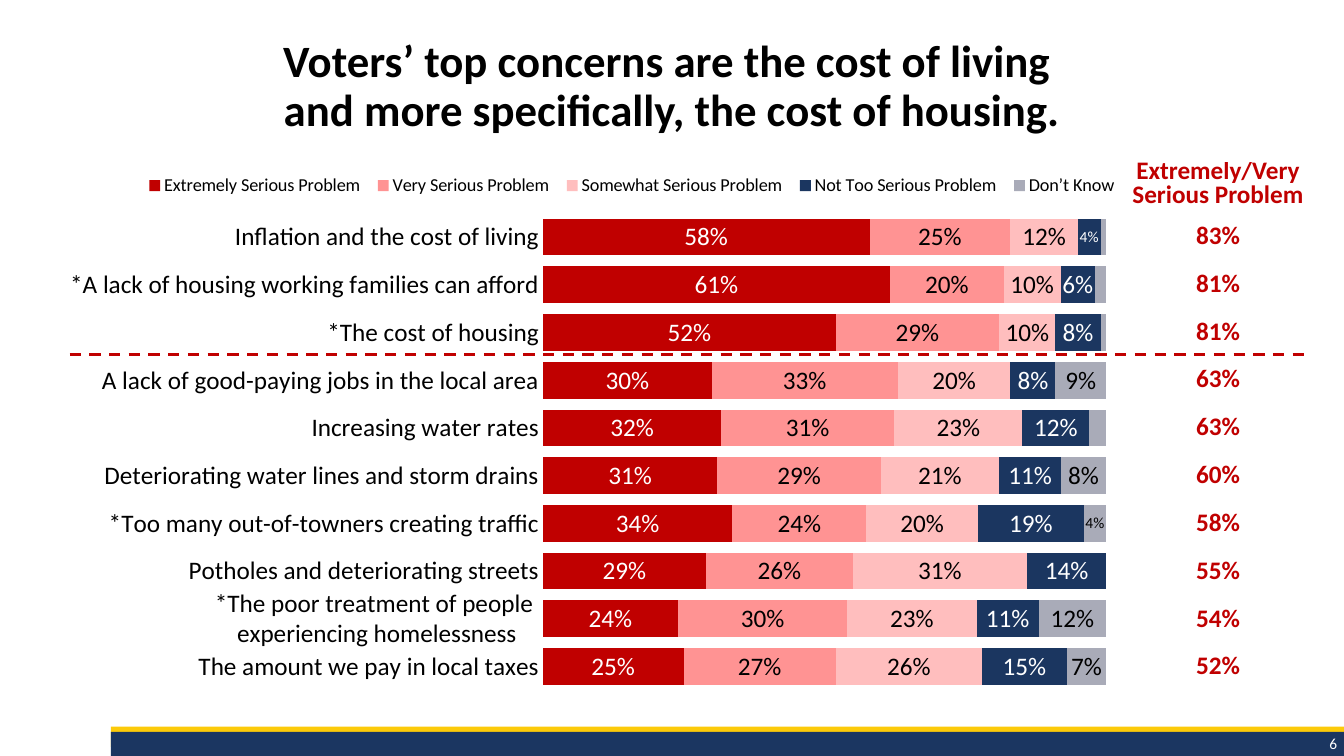
from pptx import Presentation
from pptx.chart.data import CategoryChartData
from pptx.dml.color import RGBColor
from pptx.enum.chart import XL_CHART_TYPE, XL_LEGEND_POSITION, XL_TICK_MARK
from pptx.enum.dml import MSO_LINE
from pptx.enum.shapes import MSO_CONNECTOR, MSO_SHAPE
from pptx.enum.text import MSO_ANCHOR, PP_ALIGN
from pptx.oxml import parse_xml
from pptx.oxml.ns import nsdecls, qn
from pptx.util import Pt
from lxml import etree

PX = 9144
STACK = XL_CHART_TYPE.BAR_STACKED_100
TOP = XL_LEGEND_POSITION.TOP
NO_TICK = XL_TICK_MARK.NONE
DASH = MSO_LINE.DASH
LINE = MSO_CONNECTOR.STRAIGHT
RECT = MSO_SHAPE.RECTANGLE
MIDDLE, BOTTOM = MSO_ANCHOR.MIDDLE, MSO_ANCHOR.BOTTOM
CENTER, RIGHT = PP_ALIGN.CENTER, PP_ALIGN.RIGHT
COLORS = {
    "red": "C00000", "pink": "FF9393", "pale": "FFBEBE", "navy": "1B3660",
    "gray": "A9ABB8", "gold": "FCCA09", "foot": "1B3661",
    "white": "FFFFFF", "black": "000000",
}


def style(font, size, color, bold=False):
    font.name = "Calibri"
    font.size = Pt(size)
    font.bold = bold
    font.color.rgb = RGBColor.from_string(COLORS[color])


def layout(x, y, w, h, inner=""):
    return parse_xml(
        f'<c:layout {nsdecls("c")}><c:manualLayout>{inner}'
        '<c:xMode val="edge"/><c:yMode val="edge"/>'
        f'<c:x val="{x}"/><c:y val="{y}"/><c:w val="{w}"/><c:h val="{h}"/>'
        '</c:manualLayout></c:layout>')


prs = Presentation()
prs.slide_width, prs.slide_height = 1333 * PX, 750 * PX
slide = prs.slides.add_slide(prs.slide_layouts[6])
shapes = slide.shapes

for top, high, color in [(721, 20, "gold"), (726, 24, "foot")]:
    bar = shapes.add_shape(RECT, 110 * PX, top * PX, 1223 * PX, high * PX)
    bar.shadow.inherit = False
    bar.fill.solid()
    bar.fill.fore_color.rgb = RGBColor.from_string(COLORS[color])
    bar.line.fill.background()

frame = shapes.add_textbox(1139 * PX, 723 * PX, 197 * PX, 29 * PX).text_frame
frame.word_wrap = True
frame.vertical_anchor = MIDDLE
para = frame.paragraphs[0]
para.alignment = RIGHT
run = para.add_run()
run.text = "6"
style(run.font, 11, "white")

topics = [
    "Inflation and the cost of living",
    "*A lack of housing working families can afford",
    "*The cost of housing",
    "A lack of good-paying jobs in the local area",
    "Increasing water rates",
    "Deteriorating water lines and storm drains",
    "*Too many out-of-towners creating traffic",
    "Potholes and deteriorating streets",
    "*The poor treatment of people \nexperiencing homelessness",
    "The amount we pay in local taxes",
]
answers = [
    ("Extremely Serious Problem", "red", "white",
     [58, 61, 52, 30, 32, 31, 34, 29, 24, 25]),
    ("Very Serious Problem", "pink", "black",
     [25, 20, 29, 33, 31, 29, 24, 26, 30, 27]),
    ("Somewhat Serious Problem", "pale", "black",
     [12, 10, 10, 20, 23, 21, 20, 31, 23, 26]),
    ("Not Too Serious Problem", "navy", "white",
     [4, 6, 8, 8, 12, 11, 19, 14, 11, 15]),
    ("Don’t Know", "gray", "black",
     [1, 2, 1, 9, 3, 8, 4, 0, 12, 7]),
]
data = CategoryChartData(number_format="0%")
data.categories = topics
for name, fill, ink, shares in answers:
    data.add_series(name, [share / 100 for share in shares])
chart = shapes.add_chart(
    STACK, 15 * PX, 154 * PX, 1102 * PX, 548 * PX, data).chart
style(chart.font, 10, "black")
chart.has_title = False

chart.has_legend = True
legend = chart.legend
legend.position = TOP
legend.include_in_layout = False
style(legend.font, 13, "black")
legend._element.insert(1, layout(0.11, 0.02, 0.89, 0.07))

area = chart._chartSpace.find(".//" + qn("c:plotArea"))
for old in area.findall(qn("c:layout")):
    area.remove(old)
area.insert(0, layout(0.475, 0.105, 0.507, 0.864,
                      '<c:layoutTarget val="inner"/>'))

axis = chart.category_axis
axis.reverse_order = True
axis.major_tick_mark = axis.minor_tick_mark = NO_TICK
axis.format.line.fill.background()
style(axis.tick_labels.font, 18, "black")
chart.value_axis.visible = False
chart.value_axis.has_major_gridlines = False

plot = chart.plots[0]
plot.gap_width, plot.overlap = 30, 100
plot.vary_by_categories = False
for series, (name, fill, ink, shares) in zip(plot.series, answers):
    series.format.fill.solid()
    series.format.fill.fore_color.rgb = RGBColor.from_string(COLORS[fill])
    labels = series.data_labels
    labels.show_value = True
    labels.number_format = "0%"
    labels.number_format_is_linked = False
    style(labels.font, 18, ink)
    hidden = [i for i, share in enumerate(shares) if share < 4]
    for spot, i in enumerate(hidden):
        mark = parse_xml(f'<c:dLbl {nsdecls("c")}><c:idx val="{i}"/>'
                         '<c:delete val="1"/></c:dLbl>')
        labels._element.insert(spot, mark)
    for i, share in enumerate(shares):
        if share == 4:
            style(series.points[i].data_label.font, 11, ink)

totals = [a + b for a, b in zip(answers[0][3], answers[1][3])]
cells = ["Extremely/Very Serious Problem"] + [f"{n}%" for n in totals]
table = shapes.add_table(
    len(cells), 1, 1117 * PX, 160 * PX, 182 * PX, 516 * PX).table
table.first_row = table.horz_banding = False
for i, text in enumerate(cells):
    table.rows[i].height = [48 * PX, 41 * PX][i] if i < 2 else 427 * PX // 9
    cell = table.cell(i, 0)
    cell.fill.background()
    cell.vertical_anchor = BOTTOM
    cell.margin_left = cell.margin_right = cell.margin_top = PX
    cell.margin_bottom = 0
    para = cell.text_frame.paragraphs[0]
    para.alignment = CENTER
    if i == 0:
        para.line_spacing = Pt(17)
    run = para.add_run()
    run.text = text
    style(run.font, 18, "red", True)

frame = shapes.add_textbox(33 * PX, 34 * PX, 1267 * PX, 111 * PX).text_frame
frame.word_wrap = True
para = frame.paragraphs[0]
para.alignment = CENTER
para.line_spacing = 0.9
for i, text in enumerate(["Voters’ top concerns are the cost of living ",
                          "and more specifically, the cost of housing."]):
    if i:
        para.add_line_break()
    run = para.add_run()
    run.text = text
    style(run.font, 32, "black", True)

rule = shapes.add_connector(LINE, 69 * PX, 352 * PX, 1300 * PX, 352 * PX)
rule.line.color.rgb = RGBColor.from_string(COLORS["red"])
rule.line.width = Pt(2)
rule.line.dash_style = DASH
etree.SubElement(rule._element.spPr, qn("a:effectLst"))

prs.save("out.pptx")
